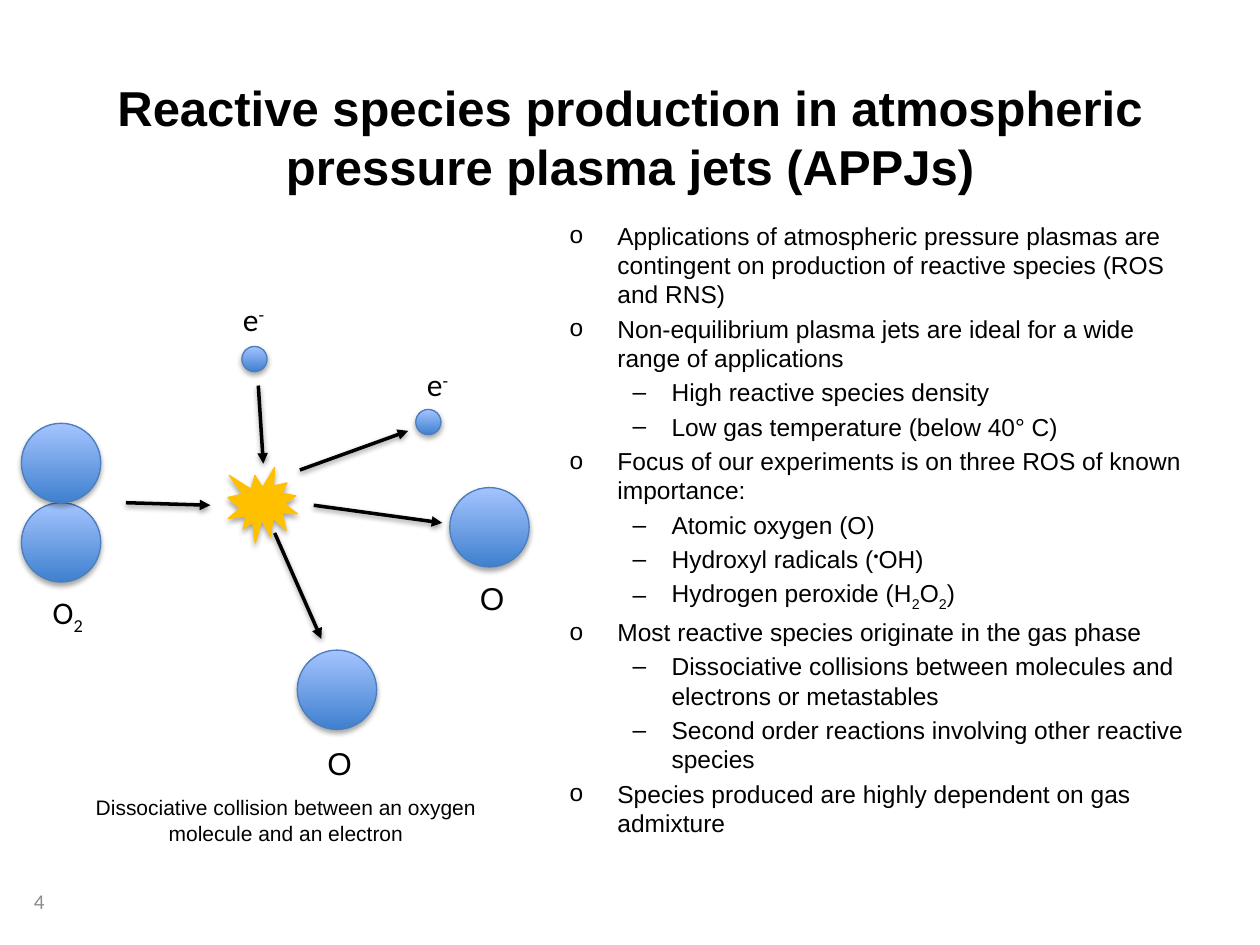
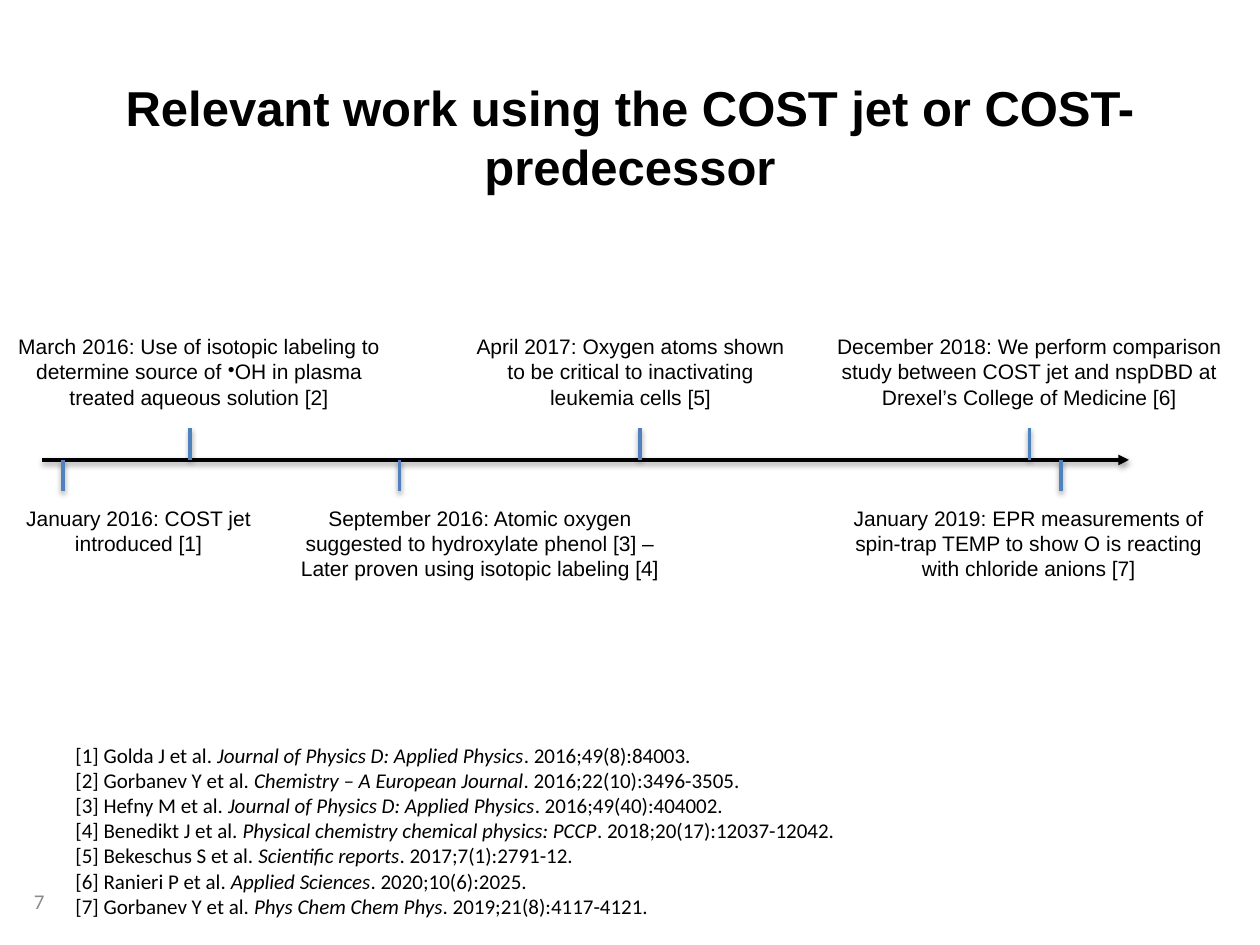
from dataclasses import dataclass
from typing import NamedTuple

from lxml.etree import SubElement
from pptx import Presentation
from pptx.dml.color import RGBColor
from pptx.enum.shapes import MSO_CONNECTOR, MSO_SHAPE
from pptx.enum.text import MSO_ANCHOR, MSO_AUTO_SIZE, PP_ALIGN
from pptx.oxml.ns import qn
from pptx.util import Inches, Pt

SLIDE_WIDTH, SLIDE_HEIGHT = Inches(10), Inches(7.5)
GRID_COLUMNS = 100  # square cells, so the slide is 75 rows high
CELL = SLIDE_WIDTH / GRID_COLUMNS

COLORS = {
    "text": "000000",
    "number": "8C8C8C",
    "ball_dark": "3F80CE",
    "ball_light": "A4C4FF",
    "ball_line": "4B7EBC",
    "burst": "FFC000",
    "tick": "4F81BD",
}
TITLE_LAYOUTS = {"content": 1, "title_only": 5}


class Box(NamedTuple):
    left: float
    top: float
    width: float
    height: float


class Phrase(NamedTuple):
    text: str
    baseline: int = 0
    italic: bool = False


@dataclass(frozen=True)
class Style:
    size: float
    font: str = "Arial"
    color: str = "text"
    bold: bool = False


class Bullet(NamedTuple):
    level: int
    phrases: list[Phrase]


class Label(NamedTuple):
    box: Box
    phrases: list[Phrase]
    font: str


class Arrow(NamedTuple):
    start: tuple[float, float]
    end: tuple[float, float]


class Event(NamedTuple):
    tick: float
    above: bool
    left: float
    width: float
    phrases: list[Phrase]


class Reference(NamedTuple):
    authors: str
    journal: str
    issue: str


TITLE = Style(28, bold=True)
BODY = Style(14)
CAPTION = Style(12)
CITATION = Style(12, "Calibri")
NUMBER = Style(12, "Calibri", "number")

TITLE_BOX = Box(5, 5, 90, 11.7)
BODY_BOX = Box(44.2, 17, 50.8, 45.5)
NUMBER_BOX = Box(1.7, 69.5, 23.3, 4)
INDENTS = [(0.38, -0.38, "o"), (0.81, -0.31, "–")]

BULLETS = [
    Bullet(0, [Phrase("Applications of atmospheric pressure plasmas are contingent on "
                      "production of reactive species (ROS and RNS)")]),
    Bullet(0, [Phrase("Non-equilibrium plasma jets are ideal for a wide range of applications")]),
    Bullet(1, [Phrase("High reactive species density")]),
    Bullet(1, [Phrase("Low gas temperature (below 40° C)")]),
    Bullet(0, [Phrase("Focus of our experiments is on three ROS of known importance:")]),
    Bullet(1, [Phrase("Atomic oxygen (O)")]),
    Bullet(1, [Phrase("Hydroxyl radicals ("), Phrase("•", 30), Phrase("OH)")]),
    Bullet(1, [Phrase("Hydrogen peroxide (H"), Phrase("2", -25), Phrase("O"),
               Phrase("2", -25), Phrase(")")]),
    Bullet(0, [Phrase("Most reactive species originate in the gas phase")]),
    Bullet(1, [Phrase("Dissociative collisions between molecules and electrons or metastables")]),
    Bullet(1, [Phrase("Second order reactions involving other reactive species")]),
    Bullet(0, [Phrase("Species produced are highly dependent on gas admixture")]),
]

ATOM, ELECTRON = 6.3, 2
MOLECULE_TOP = 33.6
BALLS = [
    Box(19.2, 27.5, ELECTRON, ELECTRON),
    Box(33, 32.5, ELECTRON, ELECTRON),
    Box(1.7, MOLECULE_TOP + ATOM, ATOM, ATOM),
    Box(1.7, MOLECULE_TOP, ATOM, ATOM),
    Box(23.6, 51.6, ATOM, ATOM),
    Box(35.7, 38.7, ATOM, ATOM),
]
BURST = Box(18.1, 37.1, 5.5, 6)
ARROWS = [
    Arrow((20.5, 30.6), (20.9, 36.8)),
    Arrow((10, 39.9), (16.7, 40.1)),
    Arrow((24.9, 40.1), (35.1, 41.5)),
    Arrow((21.8, 42.3), (25.5, 50.7)),
    Arrow((23.8, 37.3), (32.4, 34.2)),
]
ELECTRON_NAME = [Phrase("e"), Phrase("-", 30)]
LABELS = [
    Label(Box(18.3, 23.3, 3.8, 4), ELECTRON_NAME, "Calibri"),
    Label(Box(32.9, 28.5, 3.8, 4), ELECTRON_NAME, "Calibri"),
    Label(Box(3.2, 46.6, 4.5, 4), [Phrase("O"), Phrase("2", -25)], "Calibri"),
    Label(Box(37.1, 45.5, 4, 4), [Phrase("O")], "Arial"),
    Label(Box(25, 58.6, 4, 4), [Phrase("O")], "Arial"),
]

AXIS, TICK_LENGTH = 36.5, 2.5
EVENT_TOP_ABOVE, EVENT_TOP_BELOW, EVENT_HEIGHT = 26, 39.6, 7.1
EVENTS = [
    Event(5, False, -0.8, 23.6, [Phrase("January 2016: COST jet introduced [1]")]),
    Event(15.1, True, -0.8, 33.2, [
        Phrase("March 2016: Use of isotopic labeling to determine source of "),
        Phrase("●", 30), Phrase("OH in plasma treated aqueous solution [2]")]),
    Event(31.7, False, 22.7, 30.8, [
        Phrase("September 2016: Atomic oxygen suggested to hydroxylate phenol [3] – "
               "Later proven using isotopic labeling [4]")]),
    Event(50.8, True, 36.2, 27.7, [
        Phrase("April 2017: Oxygen atoms shown to be critical to inactivating "
               "leukemia cells [5]")]),
    Event(81.7, True, 64.6, 34.2, [
        Phrase("December 2018: We perform comparison study between COST jet and nspDBD "
               "at Drexel’s College of Medicine [6]")]),
    Event(84.2, False, 65.8, 31.7, [
        Phrase("January 2019: EPR measurements of spin-trap TEMP to show O is reacting "
               "with chloride anions [7]")]),
]
REFERENCES = [
    Reference("Golda J", "Journal of Physics D: Applied Physics", "2016;49(8):84003"),
    Reference("Gorbanev Y", "Chemistry – A European Journal", "2016;22(10):3496-3505"),
    Reference("Hefny M", "Journal of Physics D: Applied Physics", "2016;49(40):404002"),
    Reference("Benedikt J", "Physical chemistry chemical physics: PCCP",
              "2018;20(17):12037-12042"),
    Reference("Bekeschus S", "Scientific reports", "2017;7(1):2791-12"),
    Reference("Ranieri P", "Applied Sciences", "2020;10(6):2025"),
    Reference("Gorbanev Y", "Phys Chem Chem Phys", "2019;21(8):4117-4121"),
]


def cells(count: float) -> int:
    return round(count * CELL)


def place(box: Box) -> tuple[int, ...]:
    return tuple(cells(length) for length in box)


def rgb(name: str) -> RGBColor:
    return RGBColor.from_string(COLORS[name])


def write(paragraph, phrases: list[Phrase], style: Style) -> None:
    for phrase in phrases:
        run = paragraph.add_run()
        run.text = phrase.text
        run.font.name, run.font.size = style.font, Pt(style.size)
        run.font.bold, run.font.italic = style.bold, phrase.italic
        run.font.color.rgb = rgb(style.color)
        if phrase.baseline:
            run._r.get_or_add_rPr().set("baseline", str(phrase.baseline * 1000))


def move_placeholder(shape, box: Box) -> None:
    shape.left, shape.top, shape.width, shape.height = place(box)
    shape.text_frame.auto_size = MSO_AUTO_SIZE.NONE


def add_text(slide, box: Box, paragraphs: list[list[Phrase]], style: Style,
             align=PP_ALIGN.LEFT, wrap: bool = True):
    frame = slide.shapes.add_textbox(*place(box)).text_frame
    frame.word_wrap = wrap
    for index, phrases in enumerate(paragraphs):
        paragraph = frame.add_paragraph() if index else frame.paragraphs[0]
        paragraph.alignment = align
        write(paragraph, phrases, style)
    return frame


def add_shadow(shape, opacity: int, distance: float) -> None:
    """Drop a soft shadow straight down; call once fill and line are set."""
    effects = SubElement(shape._element.spPr, qn("a:effectLst"))
    shadow = SubElement(effects, qn("a:outerShdw"), blurRad=str(Pt(3.1)),
                        dist=str(Pt(distance)), dir="5400000", rotWithShape="0")
    color = SubElement(shadow, qn("a:srgbClr"), val="000000")
    SubElement(color, qn("a:alpha"), val=str(opacity * 1000))


def add_line(slide, start: tuple[float, float], end: tuple[float, float],
             color: str = "text", arrowhead: bool = True) -> None:
    connector = slide.shapes.add_connector(
        MSO_CONNECTOR.STRAIGHT, *map(cells, start + end))
    connector.line.color.rgb = rgb(color)
    connector.line.width = Pt(2)
    if arrowhead:
        SubElement(connector.line._get_or_add_ln(), qn("a:tailEnd"), type="triangle")
    add_shadow(connector, 38, 1.6)


def add_ball(slide, box: Box) -> None:
    ball = slide.shapes.add_shape(MSO_SHAPE.OVAL, *place(box))
    ball.fill.gradient()
    ball.fill.gradient_angle = 90
    for stop, color in zip(ball.fill.gradient_stops, ("ball_dark", "ball_light")):
        stop.color.rgb = rgb(color)
    ball.line.color.rgb = rgb("ball_line")
    ball.line.width = Pt(0.75)
    add_shadow(ball, 35, 1.8)


def add_burst(slide, box: Box) -> None:
    burst = slide.shapes.add_shape(MSO_SHAPE.EXPLOSION1, *place(box))
    burst.fill.solid()
    burst.fill.fore_color.rgb = burst.line.color.rgb = rgb("burst")
    burst.line.width = Pt(0.75)
    add_shadow(burst, 35, 1.8)


def add_titled_slide(presentation, layout: str, title: str, number: int):
    slide = presentation.slides.add_slide(
        presentation.slide_layouts[TITLE_LAYOUTS[layout]])
    move_placeholder(slide.shapes.title, TITLE_BOX)
    paragraph = slide.shapes.title.text_frame.paragraphs[0]
    paragraph.alignment = PP_ALIGN.CENTER
    write(paragraph, [Phrase(title)], TITLE)
    frame = add_text(slide, NUMBER_BOX, [[Phrase(str(number))]], NUMBER)
    frame.vertical_anchor = MSO_ANCHOR.MIDDLE
    return slide


def fill_bullets(body, bullets: list[Bullet]) -> None:
    frame = body.text_frame
    for index, bullet in enumerate(bullets):
        paragraph = frame.add_paragraph() if index else frame.paragraphs[0]
        paragraph.level = bullet.level
        if index == 0:
            paragraph.space_before = Pt(0)
        margin, indent, character = INDENTS[bullet.level]
        properties = paragraph._p.get_or_add_pPr()
        properties.set("marL", str(Inches(margin)))
        properties.set("indent", str(Inches(indent)))
        SubElement(properties, qn("a:buFont"), typeface="Arial")
        SubElement(properties, qn("a:buChar"), char=character)
        write(paragraph, bullet.phrases, BODY)


def build_species_slide(presentation) -> None:
    slide = add_titled_slide(
        presentation, "content",
        "Reactive species production in atmospheric pressure plasma jets (APPJs)", 4)
    body = slide.placeholders[1]
    move_placeholder(body, BODY_BOX)
    fill_bullets(body, BULLETS)
    for ball in BALLS:
        add_ball(slide, ball)
    for arrow in ARROWS:
        add_line(slide, arrow.start, arrow.end)
    add_burst(slide, BURST)
    for label in LABELS:
        add_text(slide, label.box, [label.phrases], Style(18, label.font), wrap=False)
    caption = "Dissociative collision between an oxygen molecule and an electron"
    add_text(slide, Box(4.2, 62.6, 37, 5), [[Phrase(caption)]], CAPTION, PP_ALIGN.CENTER)


def build_timeline_slide(presentation) -> None:
    slide = add_titled_slide(
        presentation, "title_only",
        "Relevant work using the COST jet or COST-predecessor", 7)
    add_line(slide, (3.3, AXIS), (89.6, AXIS))
    for event in EVENTS:
        tick_top = AXIS - TICK_LENGTH if event.above else AXIS
        add_line(slide, (event.tick, tick_top), (event.tick, tick_top + TICK_LENGTH),
                 "tick", arrowhead=False)
        top = EVENT_TOP_ABOVE if event.above else EVENT_TOP_BELOW
        add_text(slide, Box(event.left, top, event.width, EVENT_HEIGHT),
                 [event.phrases], CAPTION, PP_ALIGN.CENTER)
    citations = [
        [Phrase(f"[{number}] {reference.authors} et al. "),
         Phrase(reference.journal, italic=True), Phrase(f". {reference.issue}.")]
        for number, reference in enumerate(REFERENCES, start=1)
    ]
    add_text(slide, Box(5, 58.4, 64.2, 15.1), citations, CITATION)


def main() -> None:
    presentation = Presentation()
    presentation.slide_width, presentation.slide_height = SLIDE_WIDTH, SLIDE_HEIGHT
    build_species_slide(presentation)
    build_timeline_slide(presentation)
    presentation.save("out.pptx")


if __name__ == "__main__":
    main()
